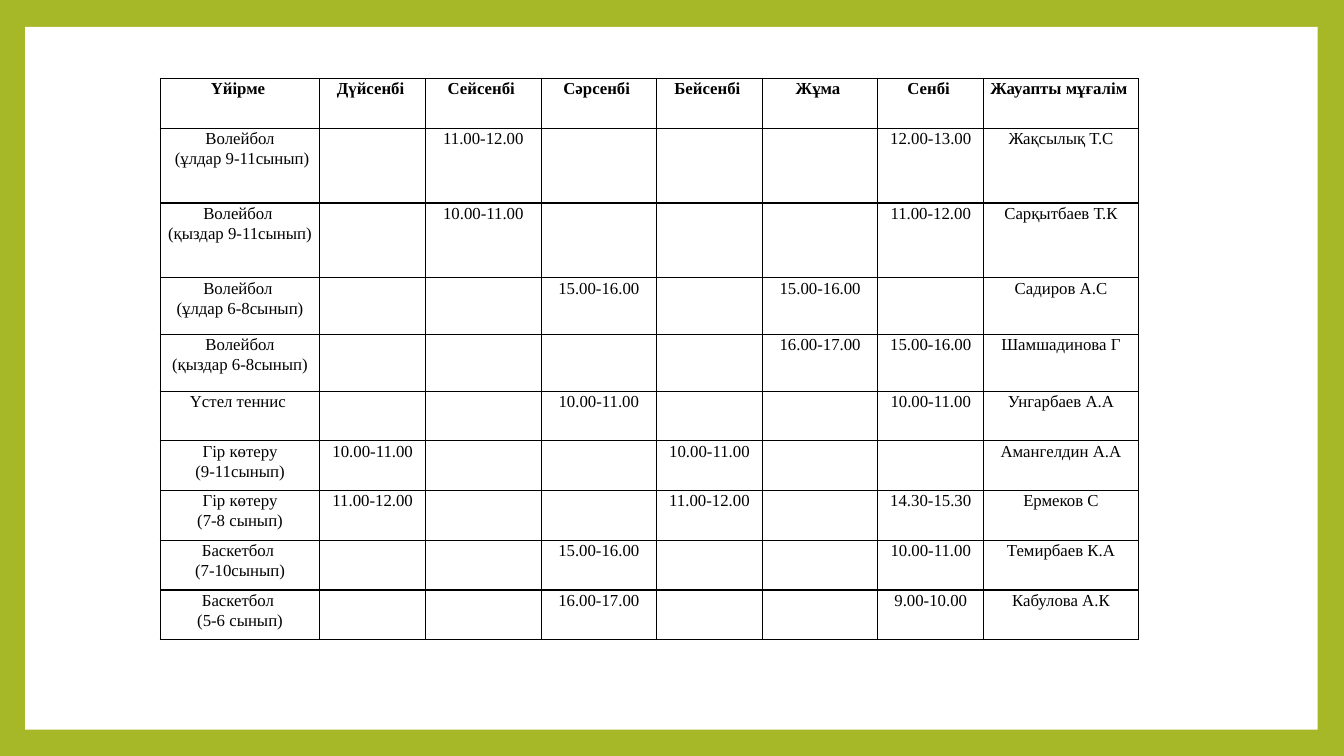
import pptx
import pptx.dml.color
import pptx.enum.shapes
import pptx.enum.text
import pptx.oxml
import pptx.oxml.ns
import pptx.util

Pt = pptx.util.Pt

GREEN, WHITE, BLACK = "A6B727", "FFFFFF", "000000"

DAYS = ["Дүйсенбі ", "Сейсенбі ", "Сәрсенбі ", "Бейсенбі ", "Жұма ", "Сенбі "]
MON, TUE, WED, THU, FRI, SAT = range(len(DAYS))

# Club, times by weekday, teacher
CLUBS = [
    ("Волейбол\n (ұлдар 9-11сынып)", {TUE: "11.00-12.00", SAT: "12.00-13.00"}, "Жақсылық Т.С"),
    ("Волейбол \n(қыздар 9-11сынып)", {TUE: "10.00-11.00", SAT: "11.00-12.00"}, "Сарқытбаев Т.К"),
    ("Волейбол \n(ұлдар 6-8сынып)", {WED: "15.00-16.00", FRI: "15.00-16.00"}, "Садиров А.С"),
    ("Волейбол\n(қыздар 6-8сынып)", {FRI: "16.00-17.00", SAT: "15.00-16.00"}, "Шамшадинова Г"),
    ("Үстел теннис ", {WED: "10.00-11.00", SAT: "10.00-11.00"}, "Унгарбаев А.А"),
    ("Гір көтеру\n(9-11сынып)", {MON: "10.00-11.00", THU: "10.00-11.00"}, "Амангелдин А.А"),
    ("Гір көтеру\n(7-8 сынып)",
     {MON: "11.00-12.00", THU: "11.00-12.00", SAT: "14.30-15.30"}, "Ермеков С"),
    ("Баскетбол \n(7-10сынып)", {WED: "15.00-16.00", SAT: "10.00-11.00"}, "Темирбаев К.А"),
    ("Баскетбол \n(5-6 сынып)", {WED: "16.00-17.00", SAT: "9.00-10.00"}, "Кабулова А.К"),
]

COLUMN_WIDTHS = [114, 75.6, 82.5, 82.5, 75.6, 82.5, 75.6, 110.5]
ROW_HEIGHTS = [35.5, 53.5, 53.5, 40.5, 40.5] + [35.5] * 5

CELL_FORMAT = {"margin_left": Pt(4.5), "margin_right": Pt(4.5),
               "margin_top": Pt(0), "margin_bottom": Pt(0)}
PARAGRAPH_FORMAT = {"alignment": pptx.enum.text.PP_ALIGN.CENTER, "line_spacing": 1.07}
FONT_FORMAT = {"name": "Times New Roman", "size": Pt(12)}


def color(hex_value):
    return pptx.dml.color.RGBColor.from_string(hex_value)


def apply_format(target, values):
    for name, value in values.items():
        setattr(target, name, value)


def add_panel(slide, left, top, width, height):
    panel = slide.shapes.add_shape(pptx.enum.shapes.MSO_SHAPE.RECTANGLE,
                                   Pt(left), Pt(top), Pt(width), Pt(height))
    panel.shadow.inherit = False
    panel.fill.solid()
    panel.fill.fore_color.rgb = color(WHITE)
    panel.line.fill.background()


def add_borders(cell):
    properties = cell._tc.get_or_add_tcPr()
    for side in ("lnL", "lnR", "lnT", "lnB"):
        properties.append(pptx.oxml.parse_xml(
            f'<a:{side} {pptx.oxml.ns.nsdecls("a")} w="{Pt(1)}"><a:solidFill>'
            f'<a:srgbClr val="{BLACK}"/></a:solidFill></a:{side}>'))


def fill_cell(cell, text, bold):
    apply_format(cell, CELL_FORMAT)
    add_borders(cell)
    cell.fill.background()
    cell.text_frame.text = text
    for paragraph in cell.text_frame.paragraphs:
        apply_format(paragraph, PARAGRAPH_FORMAT)
        apply_format(paragraph.font, FONT_FORMAT)
        for run in paragraph.runs:
            apply_format(run.font, {**FONT_FORMAT, "bold": bold})
            run.font.color.rgb = color(BLACK)


def add_timetable(slide, left, top, rows):
    timetable = slide.shapes.add_table(
        len(rows), len(COLUMN_WIDTHS), Pt(left), Pt(top),
        Pt(sum(COLUMN_WIDTHS)), Pt(sum(ROW_HEIGHTS))).table
    timetable.horz_banding = False
    for column, width in zip(timetable.columns, COLUMN_WIDTHS):
        column.width = Pt(width)
    for index, (row, height, texts) in enumerate(zip(timetable.rows, ROW_HEIGHTS, rows)):
        row.height = Pt(height)
        for cell, text in zip(row.cells, texts):
            fill_cell(cell, text, bold=index == 0)


def main():
    presentation = pptx.Presentation()
    presentation.slide_width, presentation.slide_height = Pt(960), Pt(540)
    slide = presentation.slides.add_slide(presentation.slide_layouts[6])

    # Green frame around a white panel
    slide.background.fill.solid()
    slide.background.fill.fore_color.rgb = color(GREEN)
    add_panel(slide, 18, 19.2, 923.2, 502)

    # Timetable of the sports clubs
    rows = [["Үйірме ", *DAYS, "Жауапты мұғалім "]]
    for club, times, teacher in CLUBS:
        rows.append([club, *(times.get(day, "") for day in range(len(DAYS))), teacher])
    add_timetable(slide, 114.5, 56, rows)

    presentation.save("out.pptx")


if __name__ == "__main__":
    main()
